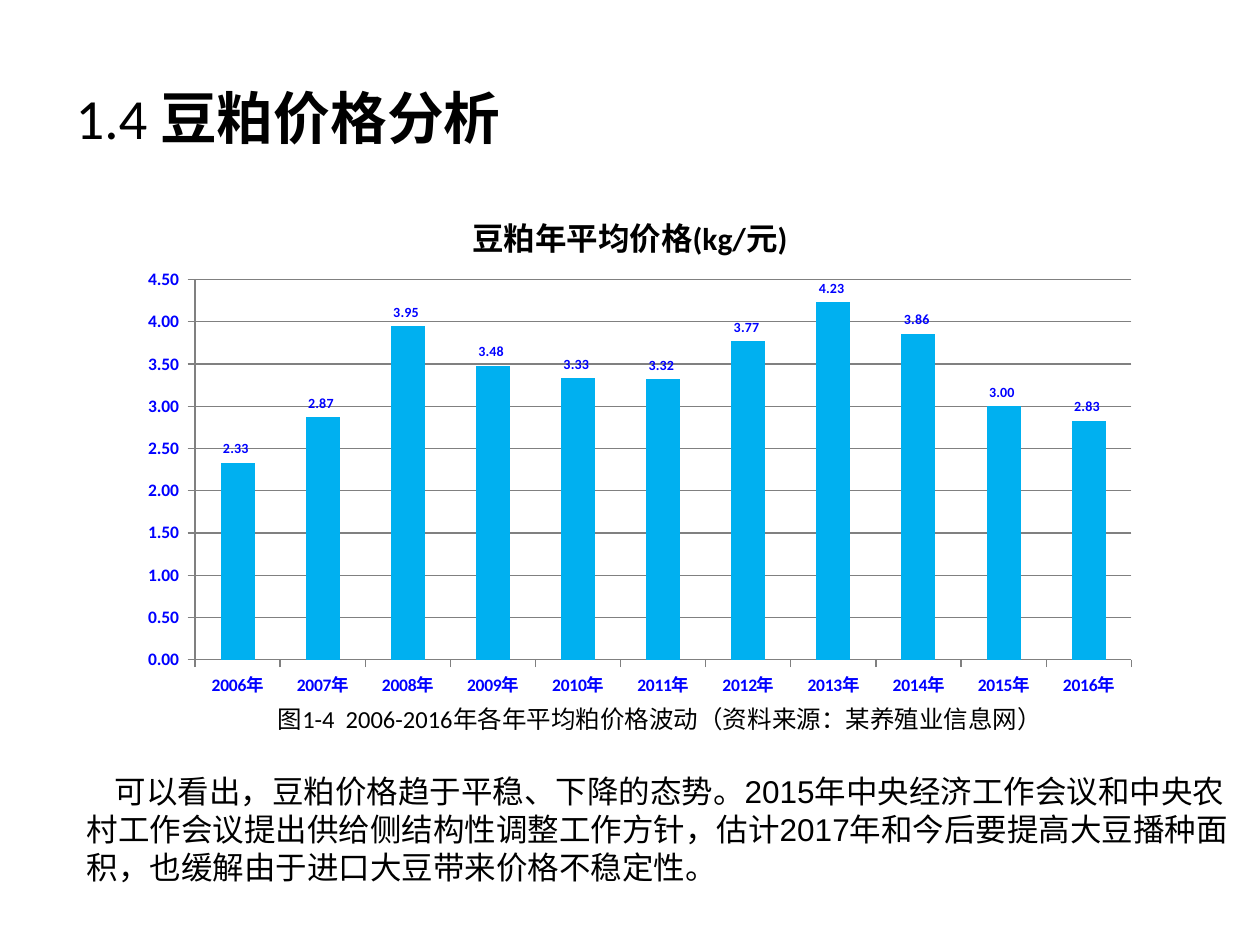
import pptx
import pptx.chart.data
import pptx.dml.color
import pptx.enum.chart
import pptx.enum.text
import pptx.oxml
import pptx.oxml.ns
import pptx.util

Pt = pptx.util.Pt
COLORS = {"text": "000000", "label": "0000FF", "bar": "00B0F0", "line": "808080"}
PRICES = [2.33, 2.87, 3.95, 3.48, 3.33, 3.32, 3.77, 4.23, 3.86, 3.00, 2.83]
YEARS = [f"{2006 + i}年" for i in range(len(PRICES))]
CHART_TITLE = "豆粕年平均价格(kg/元)"
NUMBER_FORMAT = "0.00_ "


def rgb(name):
    return pptx.dml.color.RGBColor.from_string(COLORS[name])


def style_font(font, size, color="text", bold=False, name="Calibri"):
    font.name = name
    font.size = Pt(size)
    font.bold = bold
    font.color.rgb = rgb(color)


def style_line(line):
    line.color.rgb = rgb("line")
    line.width = Pt(0.75)


def set_layout(element, index, **fractions):
    """Place a chart part by fractions of the chart area."""
    qn = pptx.oxml.ns.qn
    for old in element.findall(qn("c:layout")):
        element.remove(old)
    modes = {"xMode": "edge", "yMode": "edge"}
    if "w" in fractions:
        modes = {"layoutTarget": "inner", **modes}
    items = "".join(f'<c:{k} val="{v}"/>' for k, v in {**modes, **fractions}.items())
    element.insert(index, pptx.oxml.parse_xml(
        f'<c:layout {pptx.oxml.ns.nsdecls("c")}>'
        f"<c:manualLayout>{items}</c:manualLayout></c:layout>"))


def add_title(s):
    sp = s.shapes.title
    sp.left, sp.top, sp.width, sp.height = Pt(36), Pt(21.6), Pt(648), Pt(90)
    tf = sp.text_frame
    tf.auto_size = pptx.enum.text.MSO_AUTO_SIZE.NONE
    tf.vertical_anchor = pptx.enum.text.MSO_ANCHOR.MIDDLE
    p = tf.paragraphs[0]
    p.alignment = pptx.enum.text.PP_ALIGN.LEFT
    for text, bold in (("1.4 ", False), ("豆粕价格分析", True)):
        r = p.add_run()
        r.text = text
        style_font(r.font, 32.4, bold=bold)


def style_axis(axis):
    axis.major_tick_mark = pptx.enum.chart.XL_TICK_MARK.OUTSIDE
    style_font(axis.tick_labels.font, 10, "label", True)
    style_line(axis.format.line)


def add_price_chart(s):
    data = pptx.chart.data.CategoryChartData(number_format=NUMBER_FORMAT)
    data.categories = YEARS
    data.add_series(CHART_TITLE, PRICES)
    chart = s.shapes.add_chart(
        pptx.enum.chart.XL_CHART_TYPE.COLUMN_CLUSTERED,
        Pt(73.4), Pt(101.5), Pt(585.4), Pt(303.8), data).chart
    style_font(chart.font, 10)
    chart.has_legend = False

    # Chart title
    chart.has_title = True
    tf = chart.chart_title.text_frame
    tf.text = CHART_TITLE
    style_font(tf.paragraphs[0].runs[0].font, 18, bold=True)
    set_layout(chart.chart_title._element, 1, x=0.33, y=0.05)

    # Axes
    style_axis(chart.category_axis)
    axis = chart.value_axis
    style_axis(axis)
    axis.minimum_scale, axis.maximum_scale, axis.major_unit = 0, 4.5, 0.5
    axis.tick_labels.number_format = NUMBER_FORMAT
    axis.tick_labels.number_format_is_linked = False
    style_line(axis.major_gridlines.format.line)

    # Columns and their labels
    plot = chart.plots[0]
    plot.gap_width = 150
    plot.vary_by_categories = False
    series = plot.series[0]
    series.format.fill.solid()
    series.format.fill.fore_color.rgb = rgb("bar")
    labels = series.data_labels
    labels.show_value = True
    labels.position = pptx.enum.chart.XL_LABEL_POSITION.OUTSIDE_END
    labels.number_format = NUMBER_FORMAT
    labels.number_format_is_linked = False
    style_font(labels.font, 8, "label", True)
    set_layout(chart._chartSpace.chart.plotArea, 0, x=0.065, y=0.192, w=0.914, h=0.715)


def add_commentary(s):
    tf = s.shapes.add_textbox(Pt(42.5), Pt(399), Pt(669.6), Pt(133)).text_frame
    tf.word_wrap = True

    # Chart caption
    p = tf.paragraphs[0]
    p.text = "图1-4  2006-2016年各年平均粕价格波动（资料来源：某养殖业信息网）"
    p.alignment = pptx.enum.text.PP_ALIGN.CENTER
    style_font(p.runs[0].font, 14)

    # Conclusion
    p = tf.add_paragraph()
    p.text = ("可以看出，豆粕价格趋于平稳、下降的态势。2015年中央经济工作会议和中央农村工作会议"
              "提出供给侧结构性调整工作方针，估计2017年和今后要提高大豆播种面积，"
              "也缓解由于进口大豆带来价格不稳定性。")
    p.space_before = Pt(22)
    p._p.get_or_add_pPr().set("indent", str(Pt(16)))
    style_font(p.runs[0].font, 18, name="Arial")


def main():
    prs = pptx.Presentation()
    prs.slide_width, prs.slide_height = Pt(720), Pt(540)
    s = prs.slides.add_slide(prs.slide_layouts[5])
    add_title(s)
    add_price_chart(s)
    add_commentary(s)
    prs.save("out.pptx")


if __name__ == "__main__":
    main()
